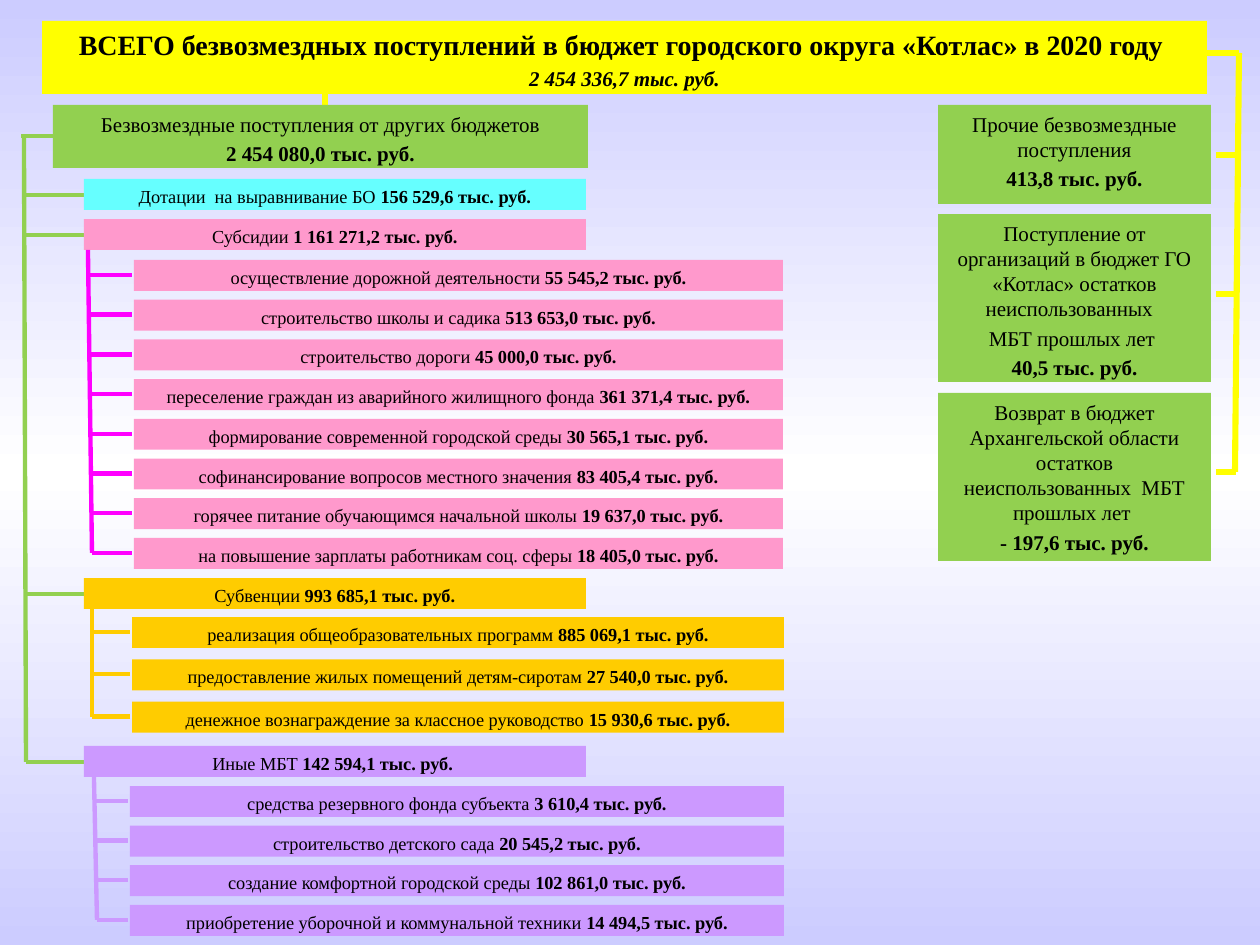
from copy import deepcopy

from pptx import Presentation
from pptx.dml.color import RGBColor
from pptx.enum import shapes, text
from pptx.oxml.ns import qn
from pptx.util import Pt

PX = 914400 / 126
FONT = "Times New Roman"
BLACK = RGBColor(0, 0, 0)
WHITE = RGBColor(0xFF, 0xFF, 0xFF)
LAVENDER = RGBColor(0xCC, 0xCC, 0xFF)
YELLOW = RGBColor(0xFF, 0xFF, 0)
GREEN = RGBColor(0x92, 0xD0, 0x50)
CYAN = RGBColor(0x66, 0xFF, 0xFF)
PINK = RGBColor(0xFF, 0x99, 0xCC)
MAGENTA = RGBColor(0xFF, 0, 0xFF)
ORANGE = RGBColor(0xFF, 0xCC, 0)
VIOLET = RGBColor(0xCC, 0x99, 0xFF)

# A paragraph is a list of runs: (text, format values)
BOLD = {"bold": True}
TITLE = [
    [("ВСЕГО безвозмездных поступлений в бюджет городского округа «Котлас» в 2020 году ",
      {"bold": True, "size": Pt(16)})],
    [("2 454 336,7 тыс. руб.", {"bold": True, "italic": True})],
]
OTHER_BUDGETS = [
    [("Безвозмездные поступления от других бюджетов", {})],
    [("2 454 080,0 тыс. руб.", BOLD)],
]

# (top, height, branch y, plain lines, amount)
SIDE_BOXES = [
    (105, 99, 155, ["Прочие безвозмездные поступления"], "413,8 тыс. руб."),
    (214, 168, 294, ["Поступление от организаций в бюджет ГО «Котлас» остатков неиспользованных  ",
                     "МБТ прошлых лет "], "40,5 тыс. руб."),
    (393, 168, 472, ["Возврат в бюджет Архангельской области остатков неиспользованных  "
                     "МБТ прошлых лет "], "- 197,6 тыс. руб."),
]

GROUPS = [
    dict(top=179, fill=CYAN, head=("Дотации  на выравнивание БО ", "156 529,6 тыс. руб."), items=[]),
    dict(top=219, fill=PINK, line=MAGENTA, spine=(88, 92), left=134, width=649,
         first=260, pitch=39.7, head=("Субсидии", " 1 161 271,2 тыс. руб."), items=[
             ("осуществление дорожной деятельности ", "55 545,2 тыс. руб."),
             ("строительство школы и садика ", "513 653,0 тыс. руб."),
             ("строительство дороги ", "45 000,0 тыс. руб."),
             ("переселение граждан из аварийного жилищного фонда ", "361 371,4 тыс. руб."),
             ("формирование современной городской среды ", "30 565,1 тыс. руб."),
             ("софинансирование вопросов местного значения ", "83 405,4 тыс. руб."),
             ("горячее питание обучающимся начальной школы ", "19 637,0 тыс. руб."),
             ("на повышение зарплаты работникам соц. сферы ", "18 405,0 тыс. руб."),
         ]),
    dict(top=578, fill=ORANGE, line=ORANGE, spine=(92, 92), left=132, width=652,
         first=617, pitch=42.3, head=("Субвенции", " 993 685,1 тыс. руб."), items=[
             ("реализация общеобразовательных программ ", "885 069,1 тыс. руб."),
             ("предоставление жилых помещений детям-сиротам ", "27 540,0 тыс. руб."),
             ("денежное вознаграждение за классное руководство ", "15 930,6 тыс. руб."),
         ]),
    dict(top=746, fill=VIOLET, line=VIOLET, spine=(94, 97), left=130, width=654,
         first=786, pitch=39.6, head=("Иные МБТ", " 142 594,1 тыс. руб. "), items=[
             ("средства резервного фонда субъекта ", "3 610,4 тыс. руб."),
             ("строительство детского сада ", "20 545,2 тыс. руб."),
             ("создание комфортной городской среды ", "102 861,0 тыс. руб."),
             ("приобретение уборочной и коммунальной техники ", "14 494,5 тыс. руб."),
         ]),
]
HEAD_LEFT, HEAD_WIDTH, ROW_HEIGHT, BRANCH_DROP = 84, 502, 31, 15
SIDE_LEFT, SIDE_WIDTH = 938, 273

prs = Presentation()
prs.slide_width, prs.slide_height = round(1260 * PX), round(945 * PX)
slide = prs.slides.add_slide(prs.slide_layouts[5])


def emu(*lengths):
    return [round(n * PX) for n in lengths]


def set_background():
    fill = slide.background.fill
    fill.gradient()
    fill.gradient_angle = 270
    stops = next(slide.element.iter(qn("a:gsLst")))
    while len(stops) < 3:
        stops.append(deepcopy(stops[-1]))
    for stop, pos, colour in zip(fill.gradient_stops, (0, 0.5, 1), (LAVENDER, WHITE, LAVENDER)):
        stop.position = pos
        stop.color.rgb = colour


def write(sp, box, colour, paragraphs, size):
    """Place a filled box and set its centred paragraphs."""
    sp.left, sp.top, sp.width, sp.height = emu(*box)
    sp.fill.solid()
    sp.fill.fore_color.rgb = colour
    tf = sp.text_frame
    frame = {"word_wrap": True, "auto_size": text.MSO_AUTO_SIZE.NONE,
             "vertical_anchor": text.MSO_ANCHOR.TOP}
    for name, value in frame.items():
        setattr(tf, name, value)
    for i, runs in enumerate(paragraphs):
        p = tf.add_paragraph() if i else tf.paragraphs[0]
        p.alignment = text.PP_ALIGN.CENTER
        p.space_before = Pt(size * 0.2)
        for words, extra in runs:
            r = p.add_run()
            r.text = words
            font = {"name": FONT, "size": Pt(size), "bold": False, **extra}
            for name, value in font.items():
                setattr(r.font, name, value)
            r.font.color.rgb = BLACK


def add_box(box, colour, paragraphs, size=12):
    sp = slide.shapes.add_shape(shapes.MSO_SHAPE.RECTANGLE, *emu(*box))
    sp.shadow.inherit = False
    sp.line.fill.background()
    write(sp, box, colour, paragraphs, size)


def add_row(left, top, width, colour, label, amount):
    add_box((left, top, width, ROW_HEIGHT), colour, [[(label, {}), (amount, BOLD)]], 10.5)


def add_line(x1, y1, x2, y2, colour, weight=2.5):
    cxn = slide.shapes.add_connector(shapes.MSO_CONNECTOR.STRAIGHT, *emu(x1, y1, x2, y2))
    cxn.line.color.rgb = colour
    cxn.line.width = Pt(weight)
    sp_pr = cxn.element.spPr
    sp_pr.append(sp_pr.makeelement(qn("a:effectLst"), {}))


set_background()
write(slide.shapes.title, (42, 21, 1165, 73), YELLOW, TITLE, 12)

add_line(325, 94, 325, 105, YELLOW, 3.5)
add_box((53, 105, 535, 63), GREEN, OTHER_BUDGETS)
add_line(53, 136, 21, 136, GREEN)
add_line(24, 135, 26, GROUPS[-1]["top"] + 16, GREEN)

for g in GROUPS:
    add_line(26, g["top"] + 16, HEAD_LEFT, g["top"] + 16, GREEN)
    add_row(HEAD_LEFT, g["top"], HEAD_WIDTH, g["fill"], *g["head"])
    if not g["items"]:
        continue
    x1, x2 = g["spine"]
    last = len(g["items"]) - 1
    add_line(x1, g["top"] + ROW_HEIGHT, x2, g["first"] + last * g["pitch"] + BRANCH_DROP, g["line"])
    for i, item in enumerate(g["items"]):
        top = g["first"] + i * g["pitch"]
        add_line(x1 + (x2 - x1) * i / last, top + BRANCH_DROP, g["left"] - 2, top + BRANCH_DROP, g["line"])
        add_row(g["left"], top, g["width"], g["fill"], *item)

add_line(1207, 53, 1239, 53, YELLOW, 3.5)
add_line(1239, 53, 1235, SIDE_BOXES[-1][2], YELLOW, 3.5)
for top, height, branch, lines, amount in SIDE_BOXES:
    add_line(1236, branch, 1216, branch, YELLOW, 3.5)
    paragraphs = [[(words, {})] for words in lines] + [[(amount, BOLD)]]
    add_box((SIDE_LEFT, top, SIDE_WIDTH, height), GREEN, paragraphs)

prs.save("out.pptx")
